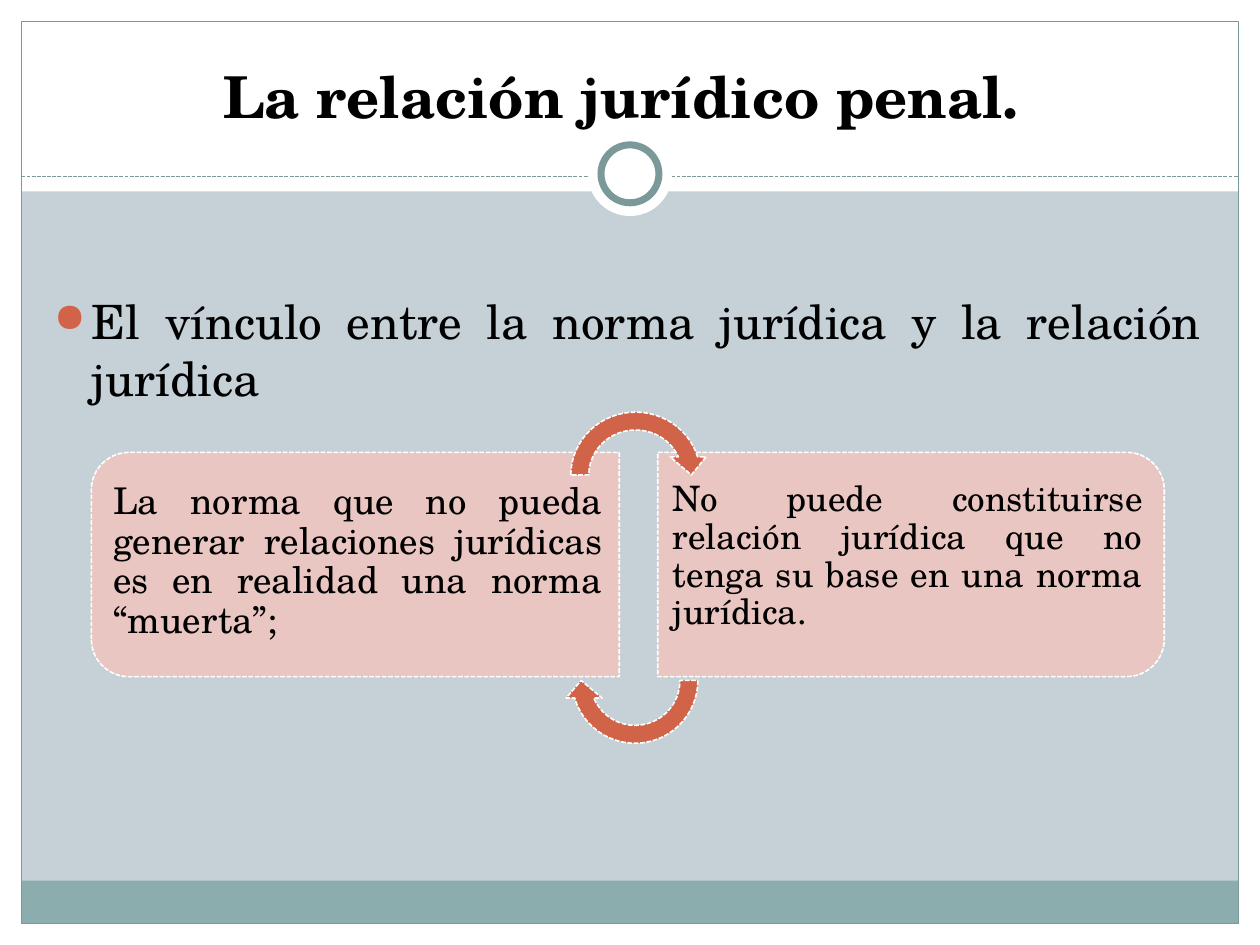
from pptx import Presentation
from pptx.dml.color import RGBColor
from pptx.enum.dml import MSO_LINE
from pptx.enum.shapes import MSO_CONNECTOR, MSO_SHAPE
from pptx.enum.text import MSO_ANCHOR, MSO_AUTO_SIZE, PP_ALIGN
from pptx.oxml.ns import qn
from pptx.util import Inches, Pt
from lxml import etree

RECT, OVAL = MSO_SHAPE.RECTANGLE, MSO_SHAPE.OVAL
CARD, ARROW = MSO_SHAPE.ROUND_2_SAME_RECTANGLE, MSO_SHAPE.CIRCULAR_ARROW
DASH = MSO_LINE.SQUARE_DOT
CENTER, JUSTIFY = PP_ALIGN.CENTER, PP_ALIGN.JUSTIFY
TOP, BOTTOM = MSO_ANCHOR.TOP, MSO_ANCHOR.BOTTOM
FONT = "TeX Gyre Schola"
WHITE, BLACK, SAGE, TEAL = "FFFFFF", "000000", "7C999A", "8CADAE"
SKY, ROSE, RUST = "C5D1D7", "E9C6C1", "D16349"
WIDTH, HEIGHT, MARGIN = 10, 7.5, 0.17
ARROW_BEND = (0.125, 11.42, 204.58, 108, 0.125)


def color(hex_value):
    """Turn a hex string into a colour."""
    return RGBColor.from_string(hex_value)


def style_line(line, hex_value, points, dash=None):
    """Format an outline or a rule."""
    line.color.rgb = color(hex_value)
    line.width = Pt(points)
    if dash:
        line.dash_style = dash


def add_figure(slide, kind, box, fill=None, line=None, rotation=0, bends=()):
    """Add a preset shape with flat fill and an optional (colour, width, dash) line."""
    figure = slide.shapes.add_shape(kind, *map(Inches, box))
    figure.shadow.inherit = False
    figure.rotation = rotation
    for index, bend in enumerate(bends):
        figure.adjustments[index] = bend
    if fill:
        figure.fill.solid()
        figure.fill.fore_color.rgb = color(fill)
    else:
        figure.fill.background()
    if line:
        style_line(figure.line, *line)
    else:
        figure.line.fill.background()


def write(holder, text, size, align, anchor=TOP, insets=(0.1, 0.05, 0.1, 0.05), bold=False):
    """Fill a text holder and return its paragraph."""
    frame = holder.text_frame
    frame.word_wrap = True
    frame.auto_size = MSO_AUTO_SIZE.NONE
    frame.vertical_anchor = anchor
    (frame.margin_left, frame.margin_top,
     frame.margin_right, frame.margin_bottom) = map(Inches, insets)
    frame.text = text
    paragraph = frame.paragraphs[0]
    paragraph.alignment = align
    font = paragraph.runs[0].font
    font.name, font.size, font.bold = FONT, Pt(size), bold
    font.color.rgb = color(BLACK)
    return paragraph


def add_bullet(paragraph, indent):
    """Give a paragraph a coloured round bullet with a hanging indent."""
    props = paragraph._p.get_or_add_pPr()
    props.set("marL", str(Inches(indent)))
    props.set("indent", str(Inches(-indent)))
    tint = etree.SubElement(props, qn("a:buClr"))
    etree.SubElement(tint, qn("a:srgbClr"), val=RUST)
    etree.SubElement(props, qn("a:buSzPct"), val="85000")
    etree.SubElement(props, qn("a:buChar"), char="●")


def add_backdrop(slide):
    """Draw the white border, footer band, frame, dashed rule and ring."""
    slide.background.fill.solid()
    slide.background.fill.fore_color.rgb = color(SKY)
    inner_width, inner_height = WIDTH - 2 * MARGIN, HEIGHT - 2 * MARGIN
    for box in ((0, HEIGHT - MARGIN, WIDTH, MARGIN), (0, 0, WIDTH, 1.52),
                (0, 0, MARGIN, HEIGHT), (WIDTH - MARGIN, 0, MARGIN, HEIGHT)):
        add_figure(slide, RECT, box, WHITE)
    add_figure(slide, RECT, (MARGIN, 6.99, inner_width, 0.34), TEAL)
    add_figure(slide, RECT, (MARGIN, MARGIN, inner_width, inner_height), line=(SAGE, 0.75))
    ends = (MARGIN, 1.4, WIDTH - MARGIN, 1.4)
    rule = slide.shapes.add_connector(MSO_CONNECTOR.STRAIGHT, *map(Inches, ends))
    style_line(rule.line, SAGE, 0.75, DASH)
    etree.SubElement(rule._element.spPr, qn("a:effectLst"))
    for diameter, line in ((0.67, None), (0.46, (SAGE, 4))):
        corner = (WIDTH - diameter) / 2
        add_figure(slide, OVAL, (corner, 1.38 - diameter / 2, diameter, diameter), WHITE, line)


def add_title(slide, text):
    """Place the title above the backdrop."""
    title = slide.shapes.title
    slide.shapes._spTree.append(title._element)
    title.left, title.top, title.width, title.height = map(Inches, (0.33, 0.25, 9.33, 0.83))
    write(title, text, 33, CENTER, BOTTOM, bold=True)


def add_text(slide, box, text, size, **options):
    """Add a justified text box and return its paragraph."""
    return write(slide.shapes.add_textbox(*map(Inches, box)), text, size, JUSTIFY, **options)


def add_card(slide, center, length, rotation, text_box, text, size, insets):
    """Add a card rounded on its outer side, with its text."""
    thickness, middle = 1.78, 4.48
    box = (center - thickness / 2, middle - length / 2, thickness, length)
    add_figure(slide, CARD, box, ROSE, (WHITE, 0.9, DASH), rotation, (0.167, 0))
    add_text(slide, text_box, text, size, insets=insets).line_spacing = 0.9


def main():
    """Build the slide."""
    deck = Presentation()
    deck.slide_width, deck.slide_height = Inches(WIDTH), Inches(HEIGHT)
    slide = deck.slides.add_slide(deck.slide_layouts[5])
    add_backdrop(slide)
    add_title(slide, "La relación jurídico penal. ")
    add_bullet(add_text(slide, (0.33, 2.27, 9.3, 1),
                        "El vínculo entre la norma jurídica y la relación jurídica", 27), 0.3)
    add_card(slide, 2.82, 4.19, 270, (0.81, 3.68, 4.1, 1.61),
             "La norma que no pueda generar relaciones jurídicas es en realidad "
             "una norma “muerta”;", 21, (0.09, 0.15, 0.13, 0.15))
    add_card(slide, 7.23, 4.02, 90, (5.22, 3.68, 3.93, 1.61),
             "No puede constituirse relación jurídica que no tenga su base "
             "en una norma jurídica.", 20, (0.12, 0.14, 0.08, 0.14))
    for box, rotation in (((4.46, 3.2, 1.17, 1.14), 0), ((4.47, 4.83, 1.14, 1.14), 180)):
        add_figure(slide, ARROW, box, RUST, (WHITE, 0.9, DASH), rotation, ARROW_BEND)
    deck.save("out.pptx")


if __name__ == "__main__":
    main()
